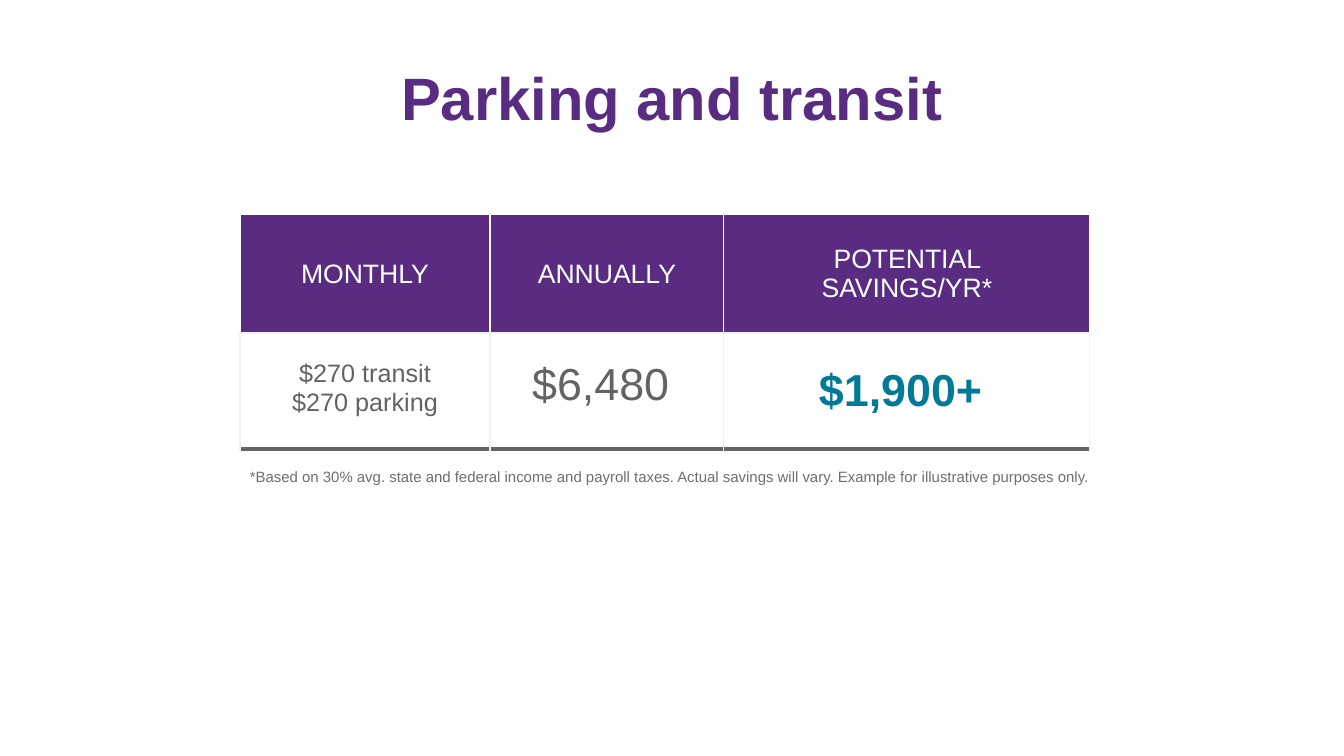
import pptx
import pptx.util
import pptx.dml.color
import pptx.enum.text
import pptx.oxml.ns
from lxml import etree

Inches = pptx.util.Inches
Pt = pptx.util.Pt
RGB = pptx.dml.color.RGBColor
Align = pptx.enum.text.PP_ALIGN
Anchor = pptx.enum.text.MSO_ANCHOR
qn = pptx.oxml.ns.qn

PURPLE = RGB(0x59, 0x2C, 0x82)
TEAL = RGB(0x00, 0x7A, 0x96)
GREY = RGB(0x62, 0x63, 0x62)
NOTE = RGB(0x6F, 0x6F, 0x6F)
PALE = RGB(0xF1, 0xF1, 0xF2)
WHITE = RGB(0xFF, 0xFF, 0xFF)


class Deck:
    font = "Arial"
    pad = Inches(0.27)

    def __init__(self):
        self.prs = pptx.Presentation()
        self.prs.slide_width = Inches(13.33)
        self.prs.slide_height = Inches(7.5)
        self.slide = self.prs.slides.add_slide(self.prs.slide_layouts[5])

    def label(self, frame, text, size, color, bold=False, align=Align.CENTER):
        frame.text = text
        for para in frame.paragraphs:
            para.alignment = align
            for run in para.runs:
                run.font.name = self.font
                run.font.size = Pt(size)
                run.font.bold = bold
                run.font.color.rgb = color

    def title(self, text, box):
        shape = self.slide.shapes.title
        shape.left, shape.top, shape.width, shape.height = map(Inches, box)
        frame = shape.text_frame
        frame.word_wrap = True
        frame.auto_size = pptx.enum.text.MSO_AUTO_SIZE.SHAPE_TO_FIT_TEXT
        frame.vertical_anchor = Anchor.TOP
        frame.margin_left = frame.margin_right = Inches(0.13)
        frame.margin_top, frame.margin_bottom = Inches(0.2), Inches(0)
        self.label(frame, text, 42.7, PURPLE, True)

    def note(self, text, box):
        shape = self.slide.shapes.add_textbox(*map(Inches, box))
        shape.text_frame.word_wrap = True
        self.label(shape.text_frame, text, 10.7, NOTE, align=Align.LEFT)

    def edge(self, cell, side, color, width):
        props = cell._tc.get_or_add_tcPr()
        line = etree.SubElement(props, qn("a:ln" + side), w=str(Pt(width)))
        fill = etree.SubElement(line, qn("a:solidFill"))
        etree.SubElement(fill, qn("a:srgbClr"), val=str(color))

    def cell(self, cell, text, size, color, bold, anchor, back, edges):
        cell.margin_left = cell.margin_right = self.pad
        cell.margin_top = cell.margin_bottom = self.pad
        cell.vertical_anchor = anchor
        self.label(cell.text_frame, text, size, color, bold)
        # Borders come before the fill in the cell properties
        for side, (tint, width) in zip("LRTB", edges):
            self.edge(cell, side, tint, width)
        if back is None:
            cell.fill.background()
        else:
            cell.fill.solid()
            cell.fill.fore_color.rgb = back

    def table(self, box, cols, rows, grid):
        frame = self.slide.shapes.add_table(
            len(rows), len(cols), *map(Inches, box))
        table = frame.table
        table.first_row = table.horz_banding = False
        for col, width in zip(table.columns, cols):
            col.width = Inches(width)
        for row, height, items in zip(table.rows, rows, grid):
            row.height = Inches(height)
            for cell, item in zip(row.cells, items):
                self.cell(cell, *item)


def main():
    deck = Deck()

    # Title
    deck.title("Parking and transit", (3.28, 0.4, 6.77, 0.83))

    # Savings table
    top = [(WHITE, 1)] * 3 + [(PALE, 1)]
    low = [(PALE, 1)] * 3 + [(GREY, 3)]
    heads = ("MONTHLY", "ANNUALLY", "POTENTIAL SAVINGS/YR*")
    grid = [
        [(head, 19, WHITE, False, Anchor.MIDDLE, PURPLE, top)
         for head in heads],
        [("$270 transit\n$270 parking", 18, GREY, False, Anchor.TOP, None, low),
         ("$6,480 ", 32, GREY, False, Anchor.TOP, None, low),
         ("$1,900+ ", 32, TEAL, True, Anchor.MIDDLE, None, low)],
    ]
    deck.table((2.38, 2.13, 8.43, 2.3), (2.48, 2.32, 3.63), (1.15, 1.15), grid)

    # Footnote
    deck.note("*Based on 30% avg. state and federal income and payroll taxes. "
              "Actual savings will vary. Example for illustrative purposes "
              "only.", (2.38, 4.59, 8.89, 0.28))

    deck.prs.save("out.pptx")


if __name__ == "__main__":
    main()
